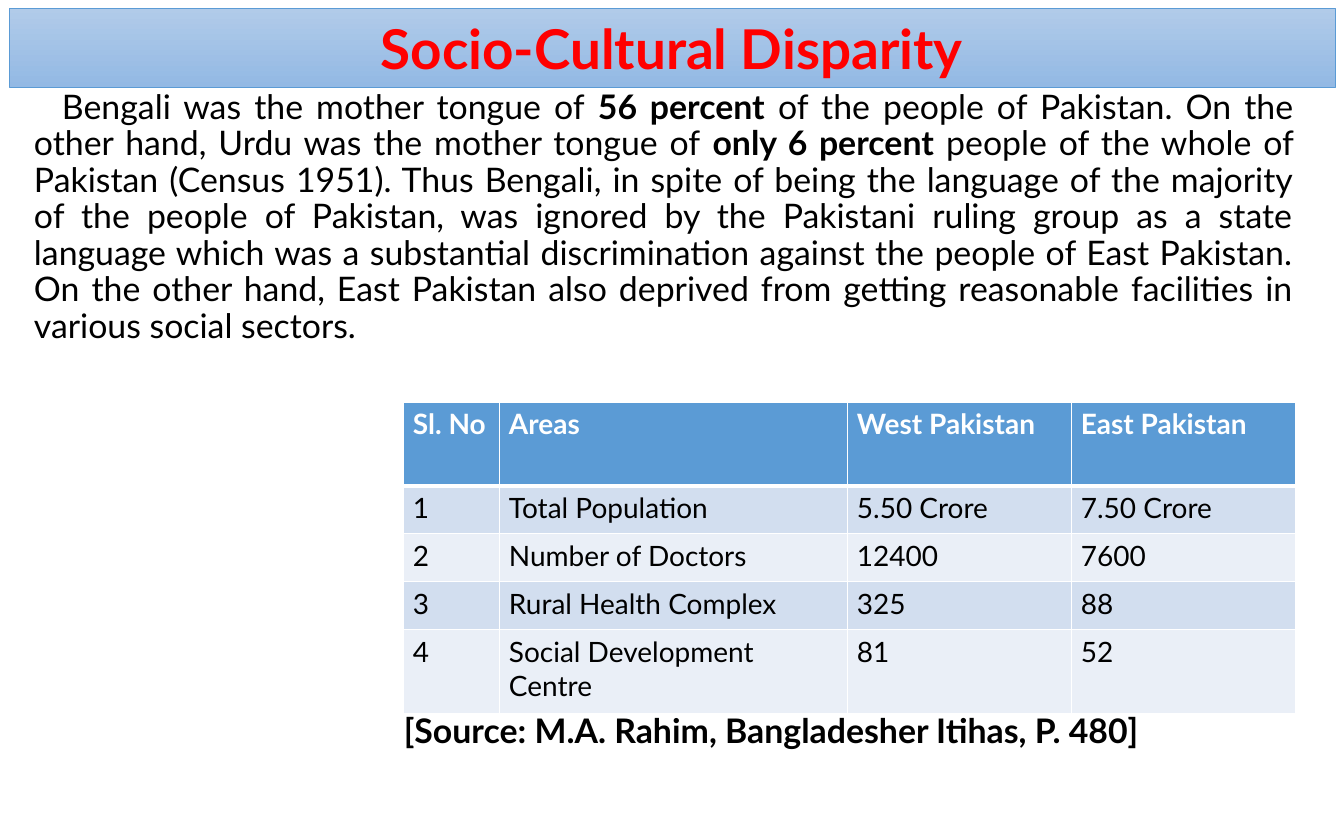
from dataclasses import dataclass

from lxml.etree import SubElement
from pptx import Presentation
from pptx.dml.color import RGBColor as Color
from pptx.enum.shapes import MSO_SHAPE as Shape
from pptx.enum.text import MSO_ANCHOR as Anchor, PP_ALIGN as Align
from pptx.oxml.ns import qn
from pptx.util import Emu, Pt


@dataclass(frozen=True)
class Theme:
    font: str = "Lato"
    ink: str = "000000"
    light: str = "FFFFFF"
    title: str = "FF0000"
    accent: str = "5B9BD5"
    banner: tuple = ("B1CBE9", "93B9E4")
    bands: tuple = ("D2DEEF", "EAEFF7")
    title_size: int = 47
    body_size: int = 29
    table_size: int = 24


THEME = Theme()

BODY = [
    ("Bengali was the mother tongue of ", False),
    ("56 percent", True),
    (" of the people of Pakistan. On the other hand, Urdu was the mother tongue of ", False),
    ("only 6 percent", True),
    (" people of the whole of Pakistan (Census 1951). Thus Bengali, in spite of being "
     "the language of the majority of the people of Pakistan, was ignored by the Pakistani "
     "ruling group as a state language which was a substantial discrimination against the "
     "people of East Pakistan. On the other hand, East Pakistan also deprived from getting "
     "reasonable facilities in various social sectors.", False),
]
ROWS = [
    ("Sl. No", "Areas", "West Pakistan", "East Pakistan"),
    ("1", "Total Population", "5.50 Crore", "7.50 Crore"),
    ("2", "Number of Doctors", "12400", "7600"),
    ("3", "Rural Health Complex", "325", "88"),
    ("4", "Social Development Centre", "81", "52"),
]
COLUMN_WIDTHS = (96, 348, 224, 224)
ROW_HEIGHTS = (84, 48, 48, 48, 84)


def px(length):
    return Emu(round(length * 914400 / 84))


def write(frame, spans, size, color=THEME.ink, align=Align.LEFT, anchor=Anchor.TOP,
          spacing=1.0, indent=0, margins=(0, 0)):
    frame.word_wrap = True
    frame.vertical_anchor = anchor
    frame.margin_left = frame.margin_right = px(margins[0])
    frame.margin_top = frame.margin_bottom = px(margins[1])
    para = frame.paragraphs[0]
    para.alignment = align
    para.line_spacing = spacing
    if indent:
        para._p.get_or_add_pPr().set("indent", str(px(indent)))
    for text, bold in spans:
        span = para.add_run()
        span.text = text
        span.font.name = THEME.font
        span.font.size = Pt(size)
        span.font.bold = bold
        span.font.color.rgb = Color.from_string(color)


def add_banner(page, box, text):
    banner = page.shapes.add_shape(Shape.RECTANGLE, *map(px, box))
    banner.shadow.inherit = False
    banner.fill.gradient()
    banner.fill.gradient_angle = 270
    for stop, color in zip(banner.fill.gradient_stops, THEME.banner):
        stop.color.rgb = Color.from_string(color)
    banner.line.color.rgb = Color.from_string(THEME.accent)
    banner.line.width = Pt(0.5)
    write(banner.text_frame, [(text, True)], THEME.title_size, color=THEME.title,
          align=Align.CENTER, anchor=Anchor.MIDDLE, margins=(12, 6))


def add_text(page, box, spans, **style):
    text_box = page.shapes.add_textbox(*map(px, box))
    write(text_box.text_frame, spans, THEME.body_size, spacing=0.9, **style)


def add_borders(cell, **widths):
    properties = cell._tc.get_or_add_tcPr()
    for side in "LRTB":
        line = SubElement(properties, qn(f"a:ln{side}"), w=str(Pt(widths.get(side, 1))))
        fill = SubElement(line, qn("a:solidFill"))
        SubElement(fill, qn("a:srgbClr"), val=THEME.light)


def add_facilities_table(page, box):
    table = page.shapes.add_table(len(ROWS), len(COLUMN_WIDTHS), *map(px, box)).table
    for column, width in zip(table.columns, COLUMN_WIDTHS):
        column.width = px(width)
    for index, (row, height, values) in enumerate(zip(table.rows, ROW_HEIGHTS, ROWS)):
        row.height = px(height)
        header = index == 0
        edges = {0: {"B": 3}, 1: {"T": 3}}.get(index, {})
        shade = THEME.accent if header else THEME.bands[(index - 1) % 2]
        for cell, value in zip(row.cells, values):
            add_borders(cell, **edges)
            cell.fill.solid()
            cell.fill.fore_color.rgb = Color.from_string(shade)
            write(cell.text_frame, [(value, header)], THEME.table_size,
                  color=THEME.light if header else THEME.ink)
            cell.margin_left = cell.margin_right = px(9)
            cell.margin_top = cell.margin_bottom = px(5)


def add_disparity_page(deck, box):
    left, top, width, height = box
    page = deck.slides.add_slide(deck.slide_layouts[6])
    table_left, table_top = left + 404, top + 402
    table_width, table_height = sum(COLUMN_WIDTHS), sum(ROW_HEIGHTS)
    add_text(page, (left + 34, top + 90, 1260, 260), BODY, align=Align.JUSTIFY, indent=28)
    add_facilities_table(page, (table_left, table_top, table_width, table_height))
    add_text(page, (table_left, table_top + table_height, table_width, 40),
             [("[Source: M.A. Rahim, Bangladesher Itihas, P. 480]", True)])
    add_banner(page, (left + 9, top + 8, width - 18, 79), "Socio-Cultural Disparity")


def main():
    deck = Presentation()
    deck.slide_width, deck.slide_height = px(1344), px(840)
    add_disparity_page(deck, (0, 0, 1344, 840))
    deck.save("out.pptx")


if __name__ == "__main__":
    main()
